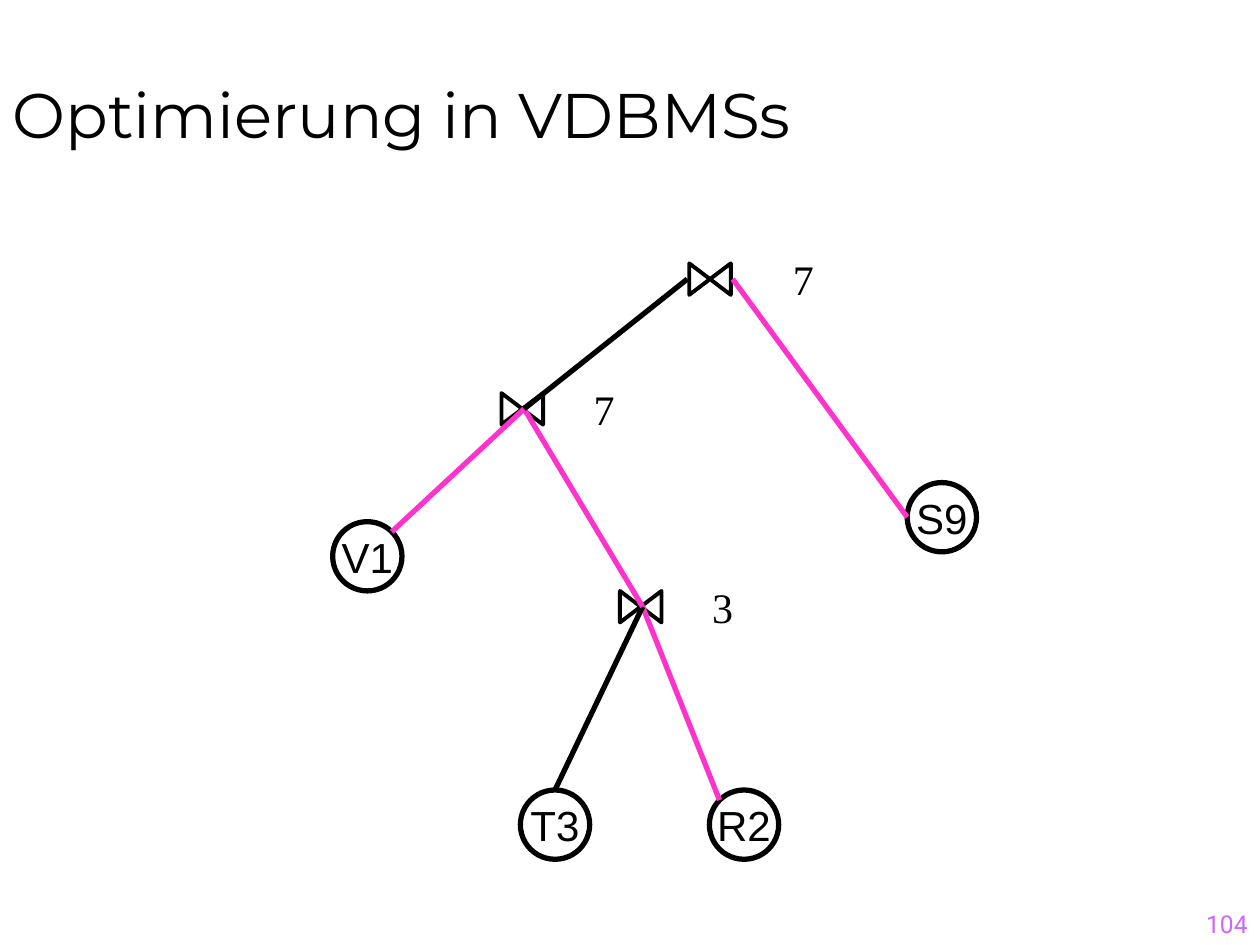
from dataclasses import dataclass
from math import cos, radians, sin
from typing import Any

from lxml.etree import SubElement
from pptx import Presentation
from pptx.dml.color import RGBColor
from pptx.enum.shapes import MSO_CONNECTOR as Link, MSO_SHAPE as Shape
from pptx.enum.text import MSO_ANCHOR as Anchor, PP_ALIGN as Align
from pptx.oxml.ns import qn
from pptx.util import Inches, Pt

BLACK = RGBColor(0x00, 0x00, 0x00)
PINK = RGBColor(0xFF, 0x33, 0xCC)
VIOLET = RGBColor(0xCC, 0x66, 0xFF)

COLS, ROWS = 100, 75
NODE = 5.5            # diameter of a table node
JOIN = (2.5, 3.3)     # join symbol before its quarter turn

# Centres in grid columns and rows
TABLES = {"T3": (44.05, 65.45), "V1": (29.15, 44.15),
          "R2": (59.05, 65.45), "S9": (74.75, 41.05)}
# Centre, cost, and distance of the cost label
JOINS = {"low": ((50.85, 48.15), "3", 6.5),
         "mid": ((41.45, 32.45), "7", 6.5),
         "top": ((56.35, 22.15), "7", 7.4)}


def rim(name, angle):
    """Point on a table node's edge, clockwise from the right."""
    x, y = TABLES[name]
    turn = radians(angle)
    return x + NODE / 2 * cos(turn), y + NODE / 2 * sin(turn)


def hub(name, shift=0.15):
    """Point on a join symbol, shifted sideways from its centre."""
    x, y = JOINS[name][0]
    return x + shift, y


@dataclass
class Canvas:
    slide: Any
    unit: int

    def box(self, mid, size):
        """Left, top, width and height of a box around its centre."""
        (x, y), (w, h) = mid, size
        return [round(v * self.unit) for v in (x - w / 2, y - h / 2, w, h)]

    def letter(self, shape, text, font, size, color=BLACK, align=Align.CENTER,
               **frame):
        """Put styled text into a shape."""
        body = shape.text_frame
        for key, value in frame.items():
            setattr(body, key, value)
        body.text = text
        para = body.paragraphs[0]
        para.alignment = align
        style = para.runs[0].font
        for key, value in {"name": font, "size": Pt(size), "bold": False}.items():
            setattr(style, key, value)
        style.color.rgb = color

    def title(self, text):
        shape = self.slide.shapes.title
        spot = self.box((COLS / 2, 6.25), (COLS, 12.5))
        for key, value in zip(("left", "top", "width", "height"), spot):
            setattr(shape, key, value)
        self.letter(shape, text, "Montserrat", 36, align=Align.LEFT,
                    vertical_anchor=Anchor.BOTTOM)

    def label(self, text, mid, size, font, points, **style):
        shape = self.slide.shapes.add_textbox(*self.box(mid, size))
        self.letter(shape, text, font, points, word_wrap=True, **style)

    def outline(self, kind, mid, size, width):
        shape = self.slide.shapes.add_shape(kind, *self.box(mid, size))
        shape.shadow.inherit = False
        shape.fill.background()
        shape.line.color.rgb = BLACK
        shape.line.width = Pt(width)
        return shape

    def table(self, name, mid):
        shape = self.outline(Shape.OVAL, mid, (NODE, NODE), 3)
        self.letter(shape, name, "Arial", 24, word_wrap=False,
                    vertical_anchor=Anchor.MIDDLE)

    def join(self, mid, cost, gap):
        self.outline(Shape.FLOWCHART_COLLATE, mid, JOIN, 2.25).rotation = 90
        self.label(cost, (mid[0] + gap, mid[1]), (5, 5), "Times New Roman", 24,
                   vertical_anchor=Anchor.MIDDLE)

    def edge(self, start, end, color):
        ends = [round(v * self.unit) for v in (*start, *end)]
        line = self.slide.shapes.add_connector(Link.STRAIGHT, *ends)
        line.line.color.rgb = color
        line.line.width = Pt(3)
        SubElement(line._element.spPr, qn("a:effectLst"))


def main():
    deck = Presentation()
    deck.slide_width, deck.slide_height = Inches(10), Inches(7.5)
    page = Canvas(deck.slides.add_slide(deck.slide_layouts[5]),
                  deck.slide_width // COLS)

    page.label("104", (89.6, ROWS - 2.5), (20.8, 5), "Roboto", 14,
               color=VIOLET, align=Align.RIGHT, vertical_anchor=Anchor.BOTTOM)
    page.title("Optimierung in VDBMSs")
    for name, mid in TABLES.items():
        page.table(name, mid)
    for join in JOINS.values():
        page.join(*join)
    for start, end, color in (
            (rim("R2", 225), hub("low"), PINK),
            (rim("T3", 270), hub("low"), BLACK),
            (hub("low"), hub("mid"), PINK),
            (rim("V1", 315), hub("mid"), PINK),
            (hub("mid"), hub("top", -1.8), BLACK),
            (rim("S9", 180), hub("top", 1.8), PINK)):
        page.edge(start, end, color)

    deck.save("out.pptx")


if __name__ == "__main__":
    main()
